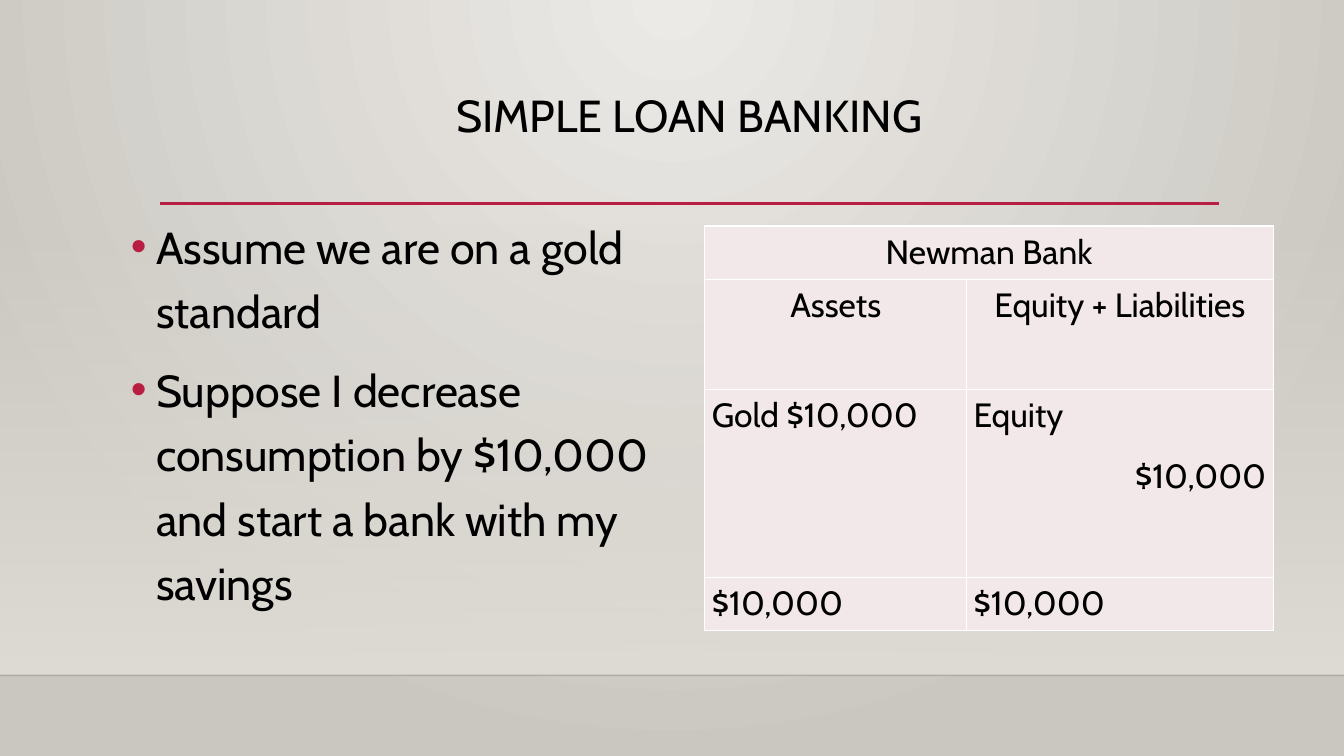
from lxml import etree
from pptx import Presentation
from pptx.dml.color import RGBColor
from pptx.enum.shapes import MSO_CONNECTOR, MSO_SHAPE
from pptx.enum.text import PP_ALIGN
from pptx.oxml import parse_xml
from pptx.oxml.ns import nsdecls, qn
from pptx.util import Pt

LINE, RECT = MSO_CONNECTOR.STRAIGHT, MSO_SHAPE.RECTANGLE
MID, JUST, RIGHT = PP_ALIGN.CENTER, PP_ALIGN.JUSTIFY, PP_ALIGN.RIGHT
FONT, INK, RED, PINK = "Cabin", "000000", "B71E42", "F3E8E9"
WIDE, HIGH, SHELF = 960, 540, 482.4


def hue(code):
    return RGBColor.from_string(code)


def style(par, size, align=None, lead=1.0, after=0):
    par.alignment = align
    par.line_spacing = lead
    par.space_after = Pt(after)
    for run in par.runs:
        run.font.size = Pt(size)
        run.font.name = FONT
        run.font.color.rgb = hue(INK)


def blend(owner, stops, shade):
    """Swap the default gradient of a filled part for the given one."""
    marks = "".join(
        f'<a:gs pos="{pos * 1000}"><a:srgbClr val="{code}">'
        f'<a:alpha val="{alpha * 1000}"/></a:srgbClr></a:gs>'
        for pos, code, alpha in stops)
    old = owner.element.find(".//" + qn("a:gradFill"))
    old.getparent().replace(old, parse_xml(
        f'<a:gradFill {nsdecls("a")} rotWithShape="1">'
        f'<a:gsLst>{marks}</a:gsLst>{shade}</a:gradFill>'))


def rule(slide, left, top, width, code, weight):
    line = slide.shapes.add_connector(
        LINE, Pt(left), Pt(top), Pt(left + width), Pt(top))
    line.line.color.rgb = hue(code)
    line.line.width = Pt(weight)
    etree.SubElement(line.element.spPr, qn("a:effectLst"))
    return line


def text_box(slide, left, top, width, height):
    box = slide.shapes.add_textbox(Pt(left), Pt(top), Pt(width), Pt(height))
    box.text_frame.word_wrap = True
    return box.text_frame


def backdrop(slide):
    # Round glow from the top, with a pale wall above the shelf line
    slide.background.fill.gradient()
    blend(slide, [(0, "ECEAE7", 100), (100, "CAC7C1", 100)],
          '<a:path path="circle">'
          '<a:fillToRect l="43000" r="43000" b="100000"/></a:path>')
    top = 159
    wall = slide.shapes.add_shape(
        RECT, 0, Pt(top), Pt(WIDE), Pt(SHELF - top))
    wall.shadow.inherit = False
    wall.line.fill.background()
    wall.fill.gradient()
    blend(wall, [(0, "DFDBD5", 0), (100, "DFDBD5", 100)],
          '<a:lin ang="5400000" scaled="0"/>')
    shelf = rule(slide, 0, SHELF, WIDE, "000001", 1)
    tint = shelf.element.find(".//" + qn("a:srgbClr"))
    etree.SubElement(tint, qn("a:alpha")).set("val", "20000")


def heading(slide, text, left, top, width, height):
    rule(slide, left, top + height, width, RED, 2.5)
    par = text_box(slide, left, top, width, height).paragraphs[0]
    par.text = text
    style(par, 32, MID, 0.9)


def bullets(slide, items, left, top, width, height):
    frame = text_box(slide, left, top, width, height)
    frame.text = "\n".join(items)
    for num, par in enumerate(frame.paragraphs):
        props = par._p.get_or_add_pPr()
        props.set("marL", str(Pt(18)))
        props.set("indent", str(-Pt(18)))
        tint = etree.SubElement(props, qn("a:buClr"))
        etree.SubElement(tint, qn("a:srgbClr")).set("val", RED)
        etree.SubElement(props, qn("a:buFont")).set("typeface", "Arial")
        etree.SubElement(props, qn("a:buChar")).set("char", "•")
        style(par, 32, lead=1.2)
        if num:
            par.space_before = Pt(10)


def edge(cell):
    props = cell._tc.get_or_add_tcPr()
    for num, side in enumerate(("a:lnL", "a:lnR", "a:lnT", "a:lnB")):
        props.insert(num, parse_xml(
            f'<{side} {nsdecls("a")} w="{Pt(1)}"><a:solidFill>'
            f'<a:srgbClr val="FFFFFF"/></a:solidFill></{side}>'))


def ledger(slide, rows, widths, heights, left, top):
    # Each cell holds its text, the alignment of each line, the space after
    grid = slide.shapes.add_table(
        len(rows), len(widths), Pt(left), Pt(top),
        Pt(sum(widths)), Pt(sum(heights))).table
    grid.first_row = grid.horz_banding = False
    for col, width in zip(grid.columns, widths):
        col.width = Pt(width)
    for row, height, data in zip(grid.rows, heights, rows):
        row.height = Pt(height)
        for cell, (text, aligns, after) in zip(row.cells, data):
            cell.margin_left = cell.margin_right = Pt(5)
            cell.margin_top = cell.margin_bottom = 0
            cell.fill.solid()
            cell.fill.fore_color.rgb = hue(PINK)
            edge(cell)
            cell.text_frame.text = text
            for par, align in zip(cell.text_frame.paragraphs, aligns):
                style(par, 24, align, 1.15, after)
    grid.cell(0, 0).merge(grid.cell(0, len(widths) - 1))


def main():
    deck = Presentation()
    deck.slide_width, deck.slide_height = Pt(WIDE), Pt(HIGH)
    slide = deck.slides.add_slide(deck.slide_layouts[6])
    backdrop(slide)
    heading(slide, "SIMPLE LOAN BANKING", 114.5, 63.2, 756, 82.2)
    bullets(slide, [
        "Assume we are on a gold standard",
        "Suppose I decrease consumption by $10,000 "
        "and start a bank with my savings",
    ], 86.4, 145.4, 406, 321)
    total = ("$10,000", [JUST], 10)
    ledger(slide, [
        [("Newman Bank", [MID], 10), ("", [], 0)],
        [("Assets", [MID], 0), ("Equity + Liabilities", [MID], 0)],
        [("Gold $10,000", [JUST], 10),
         ("Equity\n$10,000", [JUST, RIGHT], 10)],
        [total, total],
    ], [187, 219], [38, 78.5, 134.5, 38], 503.5, 161.5)
    deck.save("out.pptx")


if __name__ == "__main__":
    main()
